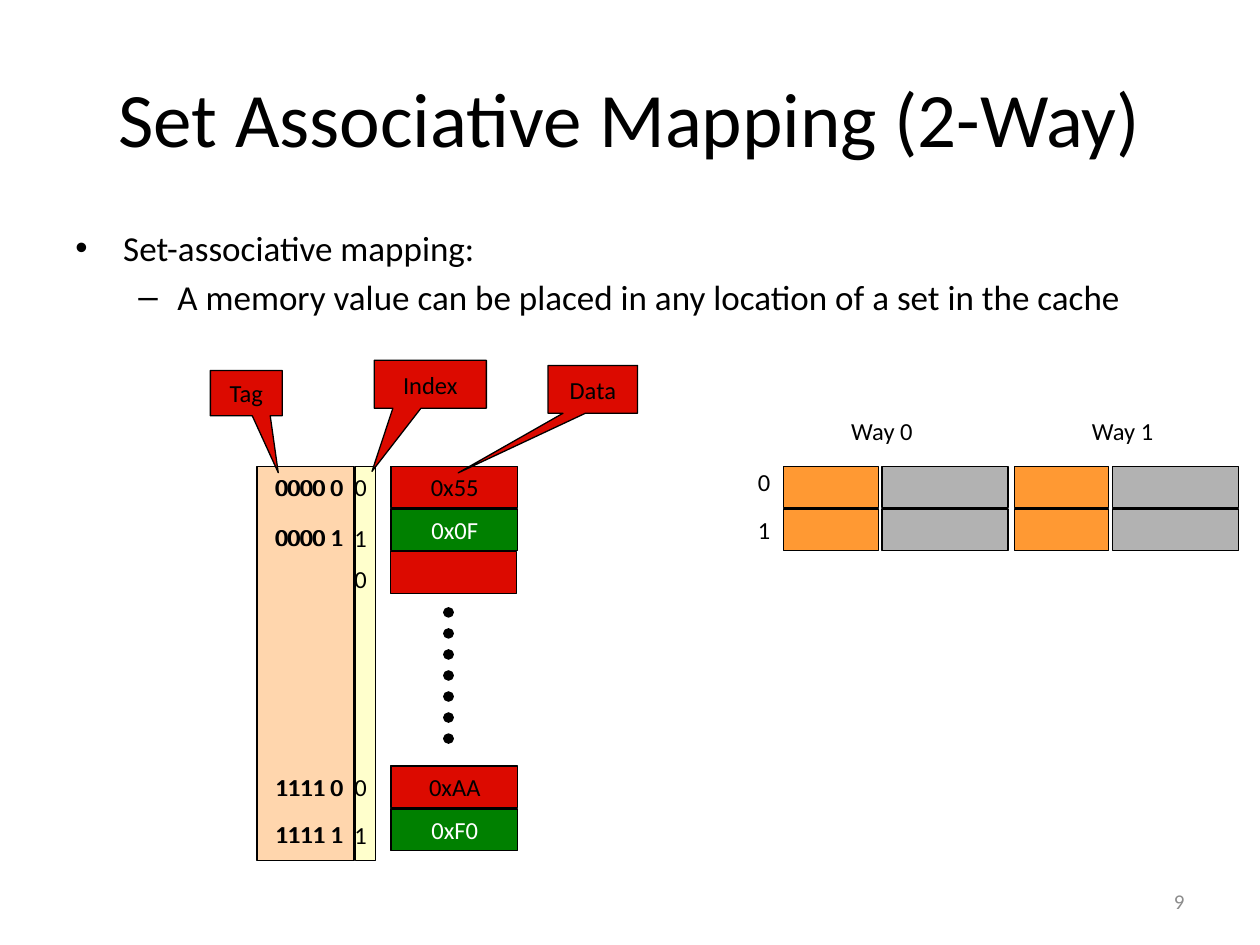
from lxml import etree
from pptx import Presentation
from pptx.dml.color import RGBColor
from pptx.enum.dml import MSO_LINE
from pptx.enum.shapes import MSO_CONNECTOR, MSO_SHAPE
from pptx.enum.text import MSO_ANCHOR, PP_ALIGN
from pptx.oxml.ns import qn
from pptx.util import Inches, Pt

RECTANGLE, CALLOUT = MSO_SHAPE.RECTANGLE, MSO_SHAPE.RECTANGULAR_CALLOUT
LEFT, CENTER, RIGHT = PP_ALIGN.LEFT, PP_ALIGN.CENTER, PP_ALIGN.RIGHT
TOP, MIDDLE = MSO_ANCHOR.TOP, MSO_ANCHOR.MIDDLE
BLACK, WHITE, GRAY = "000000", "FFFFFF", "8C8C8C"
RED, GREEN, ORANGE, SILVER, YELLOW = "DC0A00", "008000", "FF9933", "B2B2B2", "FFFF00"
FONT = "Calibri"
CELL_HEIGHT = 0.33
ROW_STEP = 0.34
LABEL_HEIGHT = 0.34


def color(value):
    return RGBColor.from_string(value)


def write(frame, text, size=14, font_color=BLACK, align=CENTER, anchor=MIDDLE, wrap=True):
    frame.word_wrap = wrap
    frame.vertical_anchor = anchor
    paragraph = frame.paragraphs[0]
    paragraph.text = text
    format_paragraph(paragraph, size, font_color, align)
    return paragraph


def format_paragraph(paragraph, size, font_color, align):
    paragraph.alignment = align
    paragraph.font.name = FONT
    paragraph.font.size = Pt(size)
    paragraph.font.color.rgb = color(font_color)


def add_text(slide, box, text, **text_format):
    shape = slide.shapes.add_textbox(*map(Inches, box))
    return write(shape.text_frame, text, **text_format)


def add_label(slide, box, text, align=CENTER):
    add_text(slide, box, text, align=align, anchor=TOP, wrap=False)


def add_box(slide, box, fill, text="", font_color=BLACK, kind=RECTANGLE, alpha=None):
    shape = slide.shapes.add_shape(kind, *map(Inches, box))
    shape.shadow.inherit = False
    shape.fill.solid()
    shape.fill.fore_color.rgb = color(fill)
    if alpha is not None:
        fill_color = shape._element.spPr.find(qn("a:solidFill"))[0]
        etree.SubElement(fill_color, qn("a:alpha"), val=str(alpha * 1000))
    shape.line.color.rgb = color(BLACK)
    shape.line.width = Pt(0.75)
    if text:
        write(shape.text_frame, text, font_color=font_color, wrap=kind == CALLOUT)
    return shape


def add_bullet(paragraph, character, level, margin, hanging):
    paragraph.level = level
    properties = paragraph._p.get_or_add_pPr()
    properties.set("marL", str(Inches(margin)))
    properties.set("indent", str(-Inches(hanging)))
    etree.SubElement(properties, qn("a:buFont"), typeface="Arial")
    etree.SubElement(properties, qn("a:buChar"), char=character)


def add_body(slide, box):
    first = slide.shapes.add_textbox(*map(Inches, box)).text_frame
    first.word_wrap = True
    second = first.add_paragraph()
    lines = [
        (first.paragraphs[0], "Set-associative mapping:", "•", 0, 0.38, 0.38),
        (second, "A memory value can be placed in any location of a set in the cache",
         "–", 1, 0.81, 0.31),
    ]
    for paragraph, text, *bullet in lines:
        paragraph.text = text
        add_bullet(paragraph, *bullet)
        format_paragraph(paragraph, 20, BLACK, LEFT)
    second.space_before = Pt(4)


def add_dots(slide, x, top, bottom):
    line = slide.shapes.add_connector(
        MSO_CONNECTOR.STRAIGHT, Inches(x), Inches(top), Inches(x), Inches(bottom))
    line.line.color.rgb = color(BLACK)
    line.line.width = Pt(6)
    line.line.dash_style = MSO_LINE.ROUND_DOT
    properties = line._element.spPr
    properties.find(qn("a:ln")).set("cap", "rnd")
    etree.SubElement(properties, qn("a:effectLst"))


def add_memory(slide, box):
    left, top, width, height = box
    tag_width, index_width, data_width = 0.77, 0.16, 1
    index_left = left + tag_width + 0.01
    data_left = left + width - data_width

    # Empty data cell and the omitted rows
    add_box(slide, (data_left, top + 2 * ROW_STEP, data_width, CELL_HEIGHT), RED)
    add_dots(slide, data_left + 0.46, top + 1.16, top + 2.19)

    # Index column
    add_box(slide, (index_left, top, index_width, height), YELLOW, alpha=20)
    for offset, digit in [(0, "0"), (0.4, "1"), (0.73, "0"), (2.38, "0"), (2.76, "1")]:
        add_label(slide, (left + 0.55, top + offset, 0.42, LABEL_HEIGHT), digit, align=RIGHT)

    # Tag column and data cells; each entry is a stack of two slightly shifted layers
    add_box(slide, (left, top, tag_width, height), ORANGE, alpha=40)
    rows = [
        ("0000 0", 0, "0x55", 0, RED, BLACK),
        ("0000 1", 0.39, "0x0F", ROW_STEP, GREEN, WHITE),
        ("1111 0", 2.38, "0xAA", 2.38, RED, BLACK),
        ("1111 1", 2.75, "0xF0", 2.38 + ROW_STEP, GREEN, WHITE),
    ]
    for shift in (0, 0.01):
        for tag, tag_offset, data, data_offset, fill, font_color in rows:
            add_label(slide, (left + 0.01 + shift, top + tag_offset, 0.8, LABEL_HEIGHT), tag)
            add_box(slide, (data_left + shift, top + data_offset, data_width, CELL_HEIGHT),
                    fill, data, font_color)


def add_callouts(slide):
    callouts = [
        ("Tag", (1.67, 2.94, 0.57, 0.36), (0.445, 1.755)),
        ("Index", (2.97, 2.86, 0.89, 0.38), (-0.52, 1.82)),
        ("Data", (4.35, 2.9, 0.71, 0.38), (-1.505, 1.745)),
    ]
    for text, box, tip in callouts:
        shape = add_box(slide, box, RED, text, kind=CALLOUT)
        shape.adjustments[0], shape.adjustments[1] = tip


def add_cache(slide, box):
    left, top, width, height = box
    tag_width, data_width, gap = 0.75, 1, 0.03
    way_step = width - tag_width - gap - data_width
    row_step = height - CELL_HEIGHT
    for way, label_left in enumerate((left + 0.41, left + 2.32)):
        way_left = left + way * way_step
        add_label(slide, (label_left, top - 0.45, 0.74, LABEL_HEIGHT), f"Way {way}")
        for row in range(2):
            row_top = top + row * row_step
            add_box(slide, (way_left, row_top, tag_width, CELL_HEIGHT), ORANGE)
            add_box(slide, (way_left + tag_width + gap, row_top, data_width, CELL_HEIGHT), SILVER)
    # Set numbers
    for row in range(2):
        add_label(slide, (left - 0.31, top - 0.04 + row * 0.38, 0.31, LABEL_HEIGHT), str(row))


def main():
    presentation = Presentation()
    presentation.slide_width, presentation.slide_height = Inches(10), Inches(7.5)
    slide = presentation.slides.add_slide(presentation.slide_layouts[6])

    add_text(slide, (0.5, 0.3, 9, 1.25), "Set Associative Mapping (2-Way)", size=44)
    add_body(slide, (0.5, 1.75, 9, 4.95))
    add_text(slide, (7.17, 6.95, 2.33, 0.4), "9", size=12, font_color=GRAY, align=RIGHT)
    add_cache(slide, (6.22, 3.7, 3.61, 0.67))
    add_memory(slide, (2.04, 3.7, 2.06, 3.13))
    add_callouts(slide)

    presentation.save("out.pptx")


if __name__ == "__main__":
    main()
